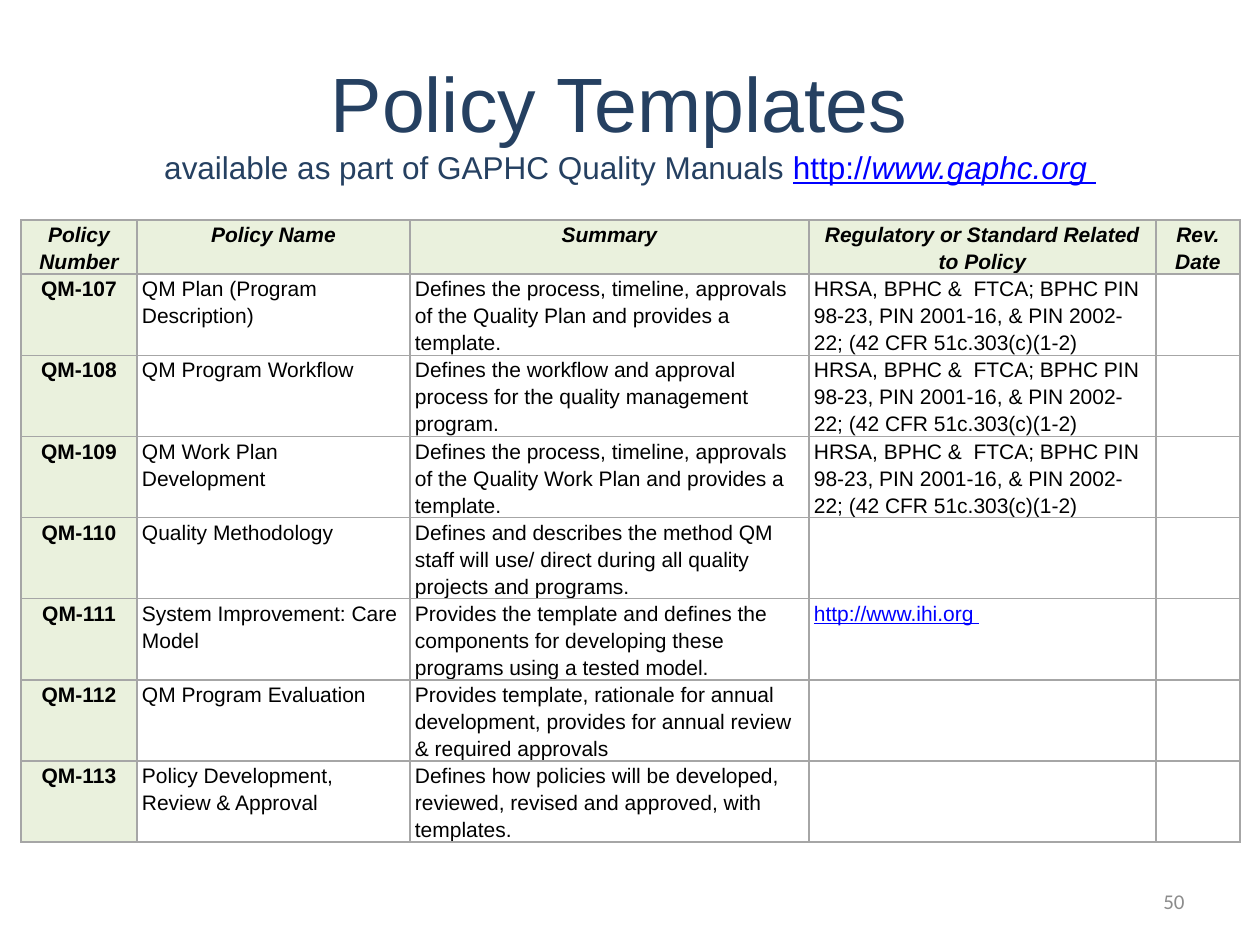
from lxml import etree
from pptx import Presentation
from pptx import util as u
from pptx.dml.color import RGBColor
from pptx.enum import text
from pptx.oxml.ns import qn

PX = 914400 / 126
NAVY, BLUE, BLACK, GREY = "254061", "0000FF", "000000", "8C8C8C"
HEADER_FILL, BORDER = "EAF1DD", "A6A6A6"

COLUMNS = [116, 273, 399, 347, 84]
HEADER_HEIGHT, ROW_HEIGHT = 54, 81
HEADERS = ["Policy Number", "Policy Name", "Summary",
           "Regulatory or Standard Related to Policy", "Rev. Date"]
HRSA = ("HRSA, BPHC &  FTCA; BPHC PIN 98-23, PIN 2001-16, "
        "& PIN 2002-22; (42 CFR 51c.303(c)(1-2)")
POLICIES = [
    ("QM Plan (Program Description)",
     "Defines the process, timeline, approvals of the Quality Plan and provides a template.",
     HRSA),
    ("QM Program Workflow",
     "Defines the workflow and approval process for the quality management program.",
     HRSA),
    ("QM Work Plan Development",
     "Defines the process, timeline, approvals of the Quality Work Plan and provides a template.",
     HRSA),
    ("Quality Methodology",
     "Defines and describes the method QM staff will use/ direct during all quality "
     "projects and programs.", ""),
    ("System Improvement: Care Model",
     "Provides the template and defines the components for developing these programs "
     "using a tested model.", "http://www.ihi.org "),
    ("QM Program Evaluation",
     "Provides template, rationale for annual development, provides for annual review "
     "& required approvals", ""),
    ("Policy Development, Review & Approval",
     "Defines how policies will be developed, reviewed, revised and approved, with templates.",
     ""),
]


def px(n):
    return u.Emu(round(n * PX))


def rgb(color):
    return RGBColor.from_string(color)


def add_run(p, words, size, color, font="Arial", bold=False, italic=False, underline=False):
    r = p.add_run()
    r.text = words
    f = r.font
    f.name, f.size, f.color.rgb = font, u.Pt(size), rgb(color)
    f.bold, f.italic, f.underline = bold, italic, underline


def add_text_box(s, left, top, width, height, align):
    tf = s.shapes.add_textbox(px(left), px(top), px(width), px(height)).text_frame
    tf.word_wrap = True
    tf.vertical_anchor = text.MSO_ANCHOR.MIDDLE
    p = tf.paragraphs[0]
    p.alignment = align
    return p


def set_borders(cell):
    tcPr = cell._tc.get_or_add_tcPr()
    for i, side in enumerate(("a:lnL", "a:lnR", "a:lnT", "a:lnB")):
        ln = etree.Element(qn(side), w=str(u.Pt(1)))
        fill = etree.SubElement(ln, qn("a:solidFill"))
        etree.SubElement(fill, qn("a:srgbClr"), val=BORDER)
        tcPr.insert(i, ln)


def fill_cell(cell, words, header=False, label=False):
    cell.margin_left = cell.margin_right = u.Inches(0.04)
    cell.margin_top = cell.margin_bottom = 0
    if header or label:
        cell.fill.solid()
        cell.fill.fore_color.rgb = rgb(HEADER_FILL)
    else:
        cell.fill.background()
    set_borders(cell)
    p = cell.text_frame.paragraphs[0]
    p.line_spacing = 1.15
    p.alignment = text.PP_ALIGN.CENTER if header or label else text.PP_ALIGN.LEFT
    if words:
        link = words.startswith("http")
        add_run(p, words, 12, BLUE if link else BLACK,
                bold=header or label, italic=header, underline=link)


def add_policy_table(s):
    rows = [HEADERS] + [(f"QM-{n}", *policy, "") for n, policy in enumerate(POLICIES, 107)]
    height = HEADER_HEIGHT + ROW_HEIGHT * len(POLICIES)
    table = s.shapes.add_table(len(rows), len(COLUMNS), px(21), px(220),
                               px(sum(COLUMNS)), px(height)).table
    table.first_row = table.horz_banding = False
    for column, width in zip(table.columns, COLUMNS):
        column.width = px(width)
    for i, row in enumerate(rows):
        table.rows[i].height = px(ROW_HEIGHT if i else HEADER_HEIGHT)
        for j, words in enumerate(row):
            fill_cell(table.cell(i, j), words, header=i == 0, label=j == 0)


def add_title(s):
    p = add_text_box(s, 63, 42, 1134, 158, text.PP_ALIGN.CENTER)
    add_run(p, "Policy Templates ", 44, NAVY)
    p.add_line_break()
    add_run(p, "available as part of GAPHC Quality Manuals ", 18, NAVY)
    add_run(p, "http://", 18, BLUE, underline=True)
    add_run(p, "www.gaphc.org ", 18, BLUE, italic=True, underline=True)


def add_page_number(s):
    p = add_text_box(s, 903, 876, 294, 50, text.PP_ALIGN.RIGHT)
    add_run(p, "50", 12, GREY, font="Calibri")


def main():
    prs = Presentation()
    prs.slide_width, prs.slide_height = px(1260), px(945)
    s = prs.slides.add_slide(prs.slide_layouts[6])
    add_policy_table(s)
    add_title(s)
    add_page_number(s)
    prs.save("out.pptx")


if __name__ == "__main__":
    main()
